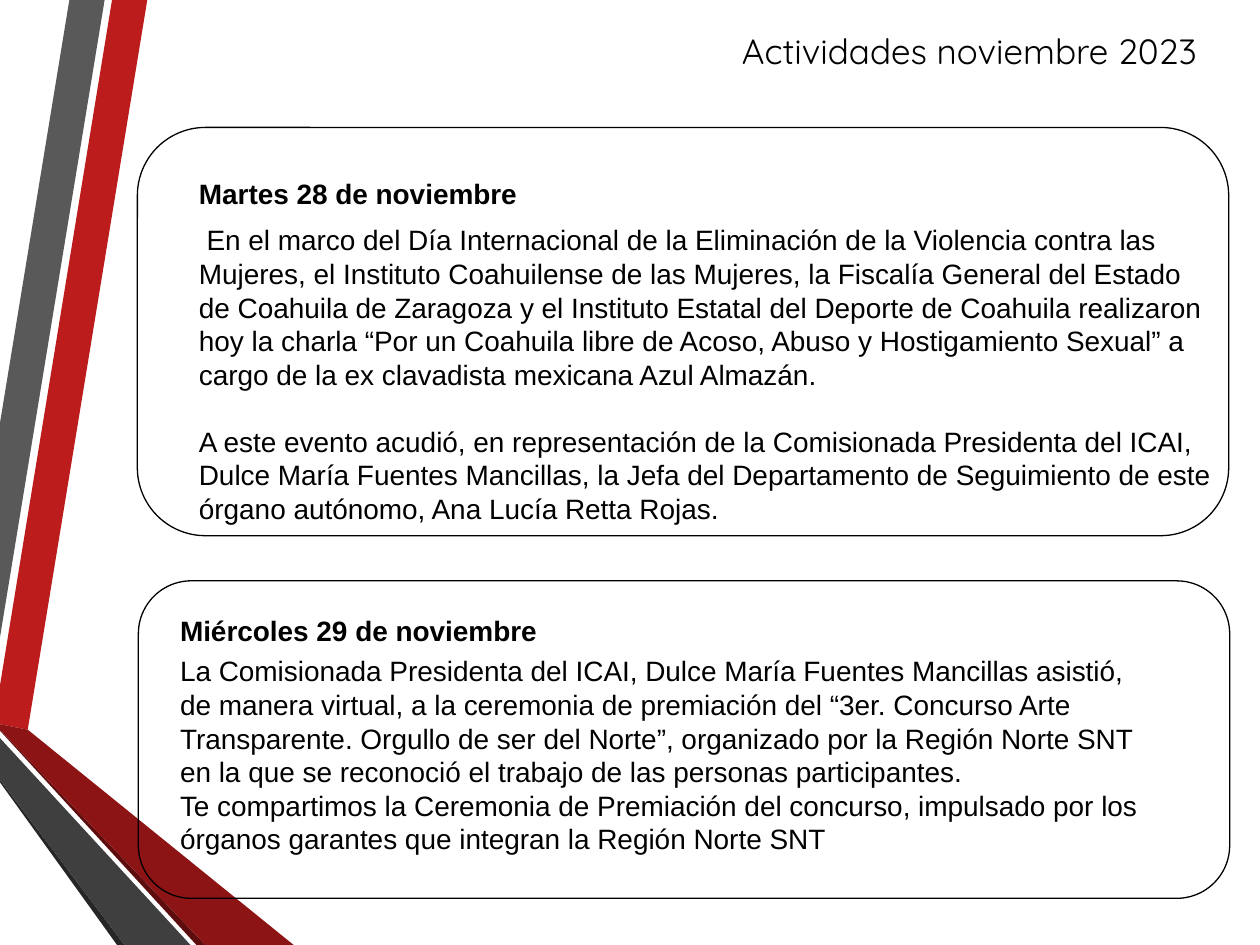
from pptx import Presentation
from pptx.dml.color import RGBColor
from pptx.enum.shapes import MSO_SHAPE as Shape
from pptx.enum.text import MSO_AUTO_SIZE as AutoSize, PP_ALIGN as Align
from pptx.util import Cm, Pt

WIDTH, HEIGHT = 25.4, 19.05
COLORS = {
    "text": "000000",
    "red": "BC1C1C",
    "gray": "595959",
    "black": "262626",
    "maroon": "5E0D0E",
    "dark red": "8D1415",
    "dark gray": "3F3F3F",
}
RIBBONS = [
    ("red", [(0, 13.82), (0, 14.6), (0.56, 14.71), (2.97, 0), (2.26, 0)]),
    ("gray", [(2.11, 0), (1.4, 0), (0, 8.53), (0, 12.85)]),
    ("black", [(0, 15.72), (0, 15.77), (2.36, HEIGHT), (2.51, HEIGHT)]),
    ("maroon", [(0, 14.71), (0, 14.73), (3.96, HEIGHT), (4.14, HEIGHT)]),
    ("dark red", [(0, 14.71), (4.14, HEIGHT), (5.92, HEIGHT), (0.56, 14.71), (0, 14.6)]),
    ("dark gray", [(0, 15.72), (2.51, HEIGHT), (3.84, HEIGHT), (0, 14.88)]),
]
TITLE = {"name": "Quicksand", "size": Pt(20)}
BODY = {"name": "Arial", "size": Pt(16)}
HEADING = {**BODY, "bold": True}

ACTIVITIES = [
    {
        "frame": (2.77, 2.57, 22, 8.23),
        "heading": "Martes 28 de noviembre",
        "heading box": (3.76, 3.43, 20.02, 0.94),
        "body": [
            " En el marco del Día Internacional de la Eliminación de la Violencia contra las "
            "Mujeres, el Instituto Coahuilense de las Mujeres, la Fiscalía General del Estado "
            "de Coahuila de Zaragoza y el Instituto Estatal del Deporte de Coahuila realizaron "
            "hoy la charla “Por un Coahuila libre de Acoso, Abuso y Hostigamiento Sexual” a "
            "cargo de la ex clavadista mexicana Azul Almazán.",
            "A este evento acudió, en representación de la Comisionada Presidenta del ICAI, "
            "Dulce María Fuentes Mancillas, la Jefa del Departamento de Seguimiento de este "
            "órgano autónomo, Ana Lucía Retta Rojas.",
        ],
        "body box": (3.76, 4.37, 20.93, 6.4),
        "gap": 19,
    },
    {
        "frame": (2.79, 11.71, 22, 6.4),
        "heading": "Miércoles 29 de noviembre",
        "heading box": (3.38, 12.24, 20.02, 1.63),
        "body": [
            "La Comisionada Presidenta del ICAI, Dulce María Fuentes Mancillas asistió, "
            "de manera virtual, a la ceremonia de premiación del “3er. Concurso Arte "
            "Transparente. Orgullo de ser del Norte”, organizado por la Región Norte SNT "
            "en la que se reconoció el trabajo de las personas participantes.",
            "Te compartimos la Ceremonia de Premiación del concurso, impulsado por los "
            "órganos garantes que integran la Región Norte SNT",
        ],
        "body box": (3.38, 13.06, 20.02, 4.37),
        "gap": 0,
    },
]


def color(name):
    return RGBColor.from_string(COLORS[name])


def add_ribbon(slide, fill, points):
    corners = [(Cm(x), Cm(y)) for x, y in points]
    builder = slide.shapes.build_freeform(*corners[0])
    builder.add_line_segments(corners[1:], close=True)
    shape = builder.convert_to_shape()
    shape.shadow.inherit = False
    shape.fill.solid()
    shape.fill.fore_color.rgb = color(fill)
    shape.line.fill.background()


def add_frame(slide, box):
    shape = slide.shapes.add_shape(Shape.FLOWCHART_ALTERNATE_PROCESS, *map(Cm, box))
    shape.shadow.inherit = False
    shape.fill.background()
    shape.line.color.rgb = color("text")
    shape.line.width = Pt(0.75)


def add_text(slide, box, texts, font, align=Align.LEFT, gap=0):
    """Add a text box; gap is the space in points between its paragraphs."""
    frame = slide.shapes.add_textbox(*map(Cm, box)).text_frame
    frame.word_wrap = True
    frame.auto_size = AutoSize.SHAPE_TO_FIT_TEXT
    for index, text in enumerate(texts):
        paragraph = frame.add_paragraph() if index else frame.paragraphs[0]
        paragraph.alignment = align
        if index and gap:
            paragraph.space_before = Pt(gap)
        run = paragraph.add_run()
        run.text = text
        for attribute, value in font.items():
            setattr(run.font, attribute, value)
        run.font.color.rgb = color("text")


def add_activity(slide, activity):
    add_frame(slide, activity["frame"])
    add_text(slide, activity["heading box"], [activity["heading"]], HEADING)
    add_text(slide, activity["body box"], activity["body"], BODY, gap=activity["gap"])


def main():
    presentation = Presentation()
    presentation.slide_width, presentation.slide_height = Cm(WIDTH), Cm(HEIGHT)
    slide = presentation.slides.add_slide(presentation.slide_layouts[6])
    for fill, points in RIBBONS:
        add_ribbon(slide, fill, points)
    add_text(slide, (14.3, 0.48, 10.49, 1.12), ["Actividades noviembre 2023"], TITLE, Align.CENTER)
    for activity in ACTIVITIES:
        add_activity(slide, activity)
    presentation.save("out.pptx")


if __name__ == "__main__":
    main()
